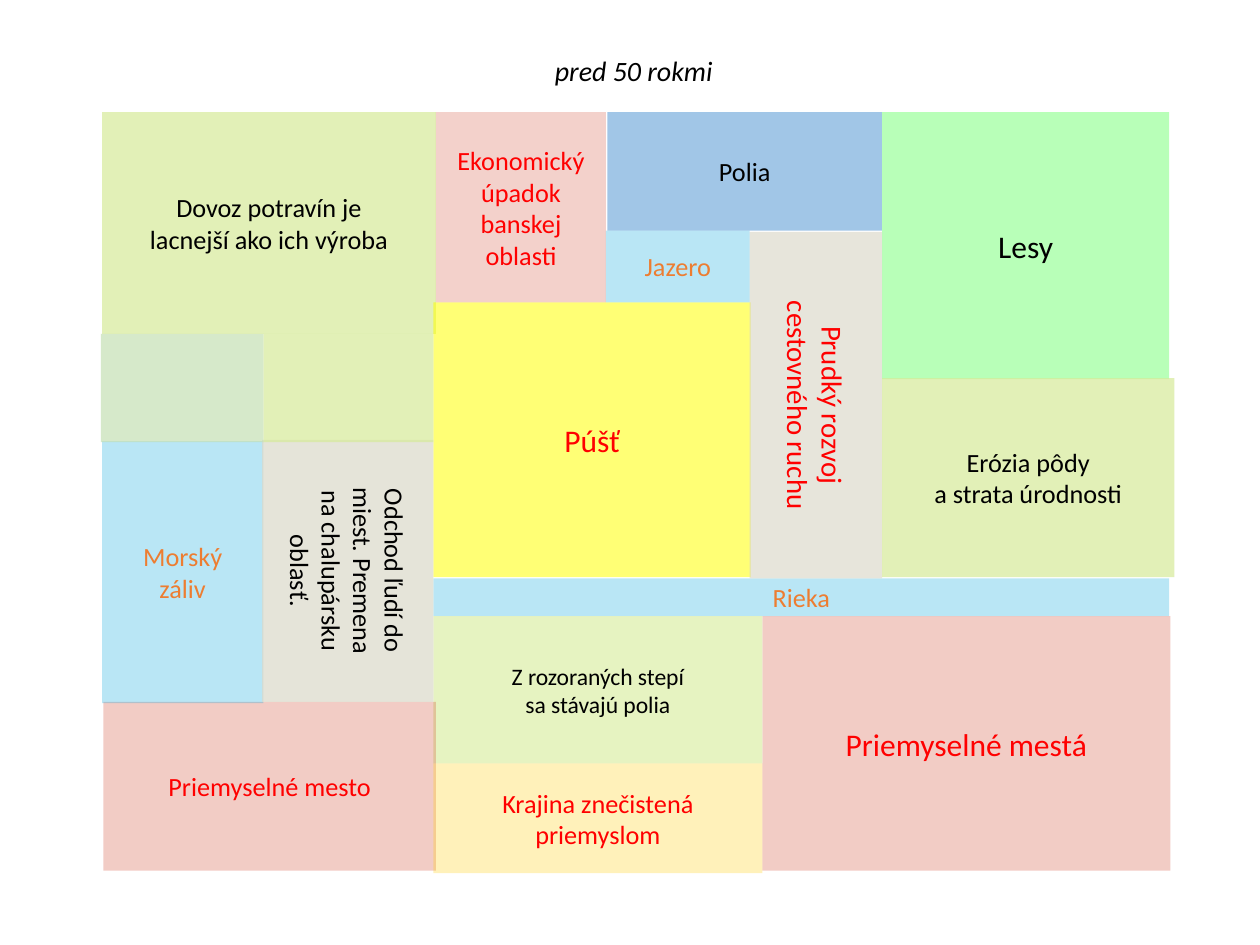
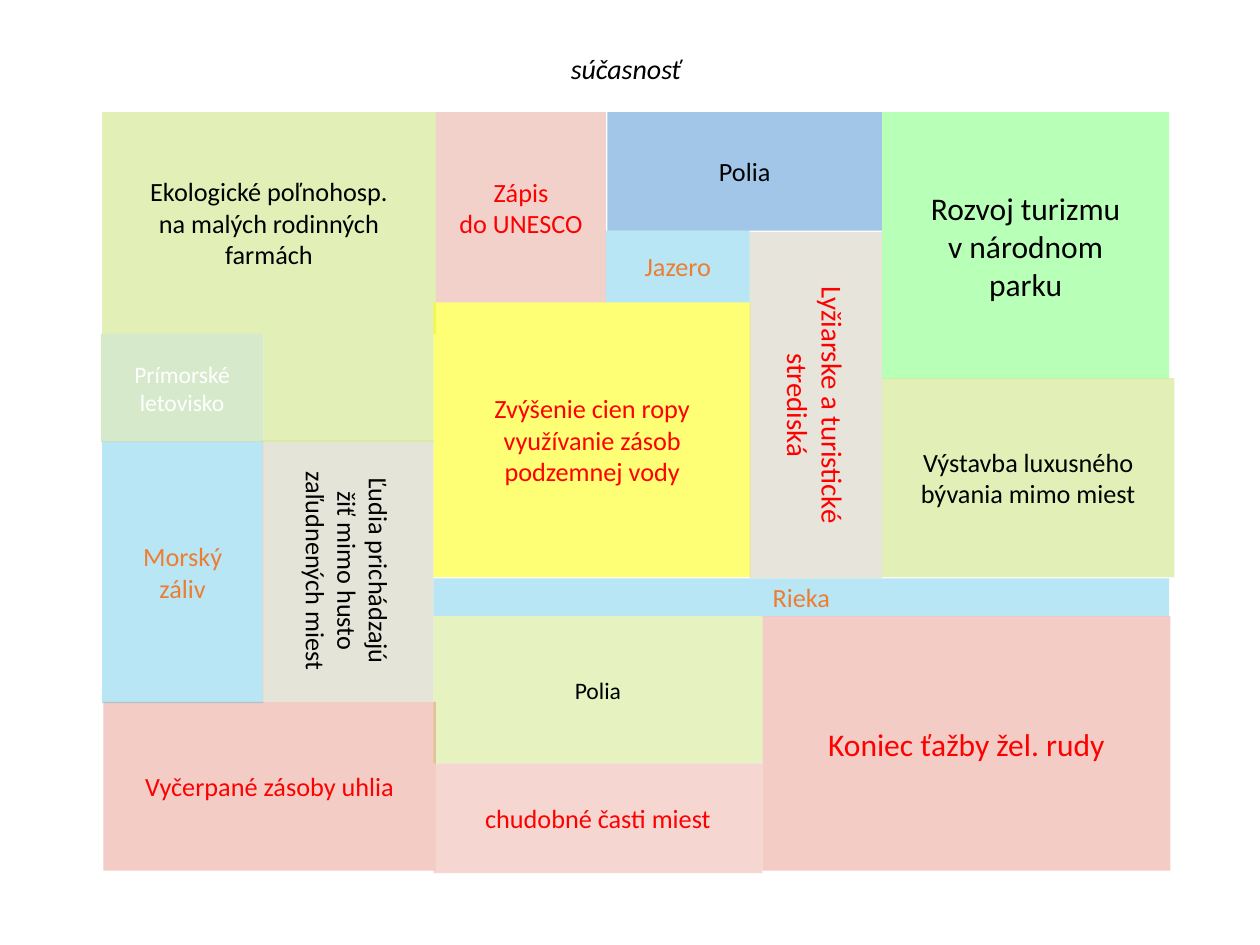
from collections import namedtuple
from dataclasses import dataclass

from lxml import etree
from pptx import Presentation
from pptx import util as u
from pptx.dml.color import RGBColor
from pptx.enum import shapes, text
from pptx.oxml.ns import qn

Tint = namedtuple("Tint", "color alpha")
Region = namedtuple("Region", "box tint size color turn", defaults=(0,))


@dataclass(frozen=True)
class Theme:
    font: str = "Calibri"
    title: float = 16
    large: float = 18
    upright: float = 16.5
    body: float = 15
    small: float = 13.5
    black: str = "000000"
    white: str = "FFFFFF"
    red: str = "FF0000"
    orange: str = "ED7D31"
    forest: Tint = Tint("00FF00", 28)
    fields: Tint = Tint("5B9BD5", 57)
    farmland: Tint = Tint("D6EB99", 70)
    desert: Tint = Tint("FFFF00", 54)
    water: Tint = Tint("11A9DF", 29)
    industry: Tint = Tint("D34831", 28)
    mining: Tint = Tint("D34831", 25)
    steppe: Tint = Tint("E2F1B7", 85)
    mountains: Tint = Tint("DBD9C9", 66)
    hills: Tint = Tint("DBD9C9", 70)
    polluted: Tint = Tint("FFCC00", 27)
    poor: Tint = Tint("F3CCC6", 80)
    coast: Tint = Tint("C5E0B4", 70)


T = Theme()

# Map regions from back to front; boxes are left, top, width, height in inches.
REGIONS = {
    "forest": Region((7, 0.89, 2.28, 2.12), T.forest, T.large, T.black),
    "fields": Region((4.82, 0.89, 2.18, 0.94), T.fields, T.body, T.black),
    "farms": Region((0.81, 0.89, 2.65, 1.76), T.farmland, T.body, T.black),
    "desert": Region((3.44, 2.4, 2.52, 2.18), T.desert, T.large, T.red),
    "river": Region((3.44, 4.59, 5.84, 0.3), T.water, T.body, T.orange),
    "cities": Region((6.05, 4.89, 3.24, 2.02), T.industry, T.large, T.red),
    "steppe": Region((3.44, 4.89, 2.61, 1.17), T.steppe, T.small, T.black),
    "city": Region((0.82, 5.57, 2.64, 1.34), T.industry, T.body, T.red),
    "mountains": Region((5.1, 2.69, 2.75, 1.05), T.mountains, T.upright, T.red, 90),
    "bay": Region((0.81, 3.5, 1.28, 2.08), T.water, T.body, T.orange),
    "hills": Region((1.72, 3.85, 2.08, 1.36), T.hills, T.body, T.black, 90),
    "mines": Region((3.46, 0.89, 1.35, 1.51), T.mining, T.body, T.red),
    "lake": Region((4.81, 1.83, 1.14, 0.57), T.water, T.body, T.orange),
    "eroded": Region((7, 3, 2.32, 1.58), T.farmland, T.body, T.black),
    "polluted": Region((3.44, 6.06, 2.61, 0.87), T.polluted, T.body, T.red),
    "meadow": Region((2.09, 2.65, 1.35, 0.86), T.farmland, T.body, T.black),
    "coast": Region((0.8, 2.65, 1.29, 0.86), T.coast, T.small, T.white),
}

# Labels that do not change; \v breaks a line within a paragraph.
COMMON = {
    "fields": "Polia",
    "river": "Rieka",
    "bay": "Morský\nzáliv",
    "lake": "Jazero",
}
PAST = {
    "forest": "Lesy",
    "farms": "Dovoz potravín je\vlacnejší ako ich výroba",
    "desert": "Púšť",
    "cities": "Priemyselné mestá",
    "steppe": "Z rozoraných stepí\nsa stávajú polia",
    "city": "Priemyselné mesto",
    "mountains": "Prudký rozvoj\ncestovného ruchu",
    "hills": "Odchod ľudí do\vmiest. Premena\vna chalupársku\voblasť.",
    "mines": "Ekonomický\vúpadok\nbanskej\noblasti",
    "eroded": "Erózia pôdy\va strata úrodnosti",
    "polluted": "Krajina znečistená\vpriemyslom",
}
PRESENT = {
    "forest": "Rozvoj turizmu\vv národnom\vparku",
    "farms": "Ekologické poľnohosp.\vna malých rodinných\vfarmách",
    "desert": "Zvýšenie cien ropy\nvyužívanie zásob\vpodzemnej vody",
    "cities": "Koniec ťažby žel. rudy",
    "steppe": "Polia",
    "city": "Vyčerpané zásoby uhlia",
    "mountains": "Lyžiarske a turistické\vstrediská",
    "hills": "Ľudia prichádzajú\vžiť mimo husto\vzaľudnených miest",
    "mines": "Zápis\vdo UNESCO",
    "eroded": "Výstavba luxusného\vbývania mimo miest",
    "polluted": "chudobné časti miest",
    "coast": "Prímorské\vletovisko",
}
PRESENT_STYLE = {
    "desert": {"size": T.body},
    "polluted": {"tint": T.poor},
}


class LandscapeDeck:
    def __init__(self, theme):
        self.theme = theme
        self.prs = Presentation()
        self.prs.slide_width = u.Inches(10)
        self.prs.slide_height = u.Inches(7.5)
        self.s = None

    def add_slide(self):
        self.s = self.prs.slides.add_slide(self.prs.slide_layouts[6])

    def set_label(self, tf, words, size, color, italic=False):
        tf.text = words
        for p in tf.paragraphs:
            p.alignment = text.PP_ALIGN.CENTER
            p.font.name = self.theme.font
            p.font.size = u.Pt(size)
            p.font.italic = italic
            p.font.color.rgb = RGBColor.from_string(color)

    def title(self, words, left, top):
        box = [u.Inches(v) for v in (left, top, 7.5, 0.37)]
        tf = self.s.shapes.add_textbox(*box).text_frame
        tf.word_wrap = True
        self.set_label(tf, words, self.theme.title, self.theme.black, italic=True)

    def region(self, region, label):
        box = [u.Inches(v) for v in region.box]
        sp = self.s.shapes.add_shape(shapes.MSO_SHAPE.RECTANGLE, *box)
        sp.rotation = region.turn
        sp.shadow.inherit = False
        sp.line.fill.background()
        self.tint(sp, region.tint)
        if label:
            tf = sp.text_frame
            tf.word_wrap = False
            tf.vertical_anchor = text.MSO_ANCHOR.MIDDLE
            self.set_label(tf, label, region.size, region.color)

    def tint(self, sp, tint):
        """Fill with a colour at the tint's opacity in percent."""
        sp.fill.solid()
        sp.fill.fore_color.rgb = RGBColor.from_string(tint.color)
        color = sp.element.spPr.find(qn("a:solidFill")).find(qn("a:srgbClr"))
        etree.SubElement(color, qn("a:alpha"), val=str(tint.alpha * 1000))

    def landscape(self, title, left, top, labels, changes):
        """Draw the whole map of one era."""
        self.add_slide()
        self.title(title, left, top)
        labels = {**COMMON, **labels}
        for name, region in REGIONS.items():
            region = region._replace(**changes.get(name, {}))
            self.region(region, labels.get(name))


def main():
    deck = LandscapeDeck(T)
    deck.landscape("pred 50 rokmi", 1.28, 0.38, PAST, {})
    deck.landscape("súčasnosť", 1.22, 0.36, PRESENT, PRESENT_STYLE)
    deck.prs.save("out.pptx")


if __name__ == "__main__":
    main()
